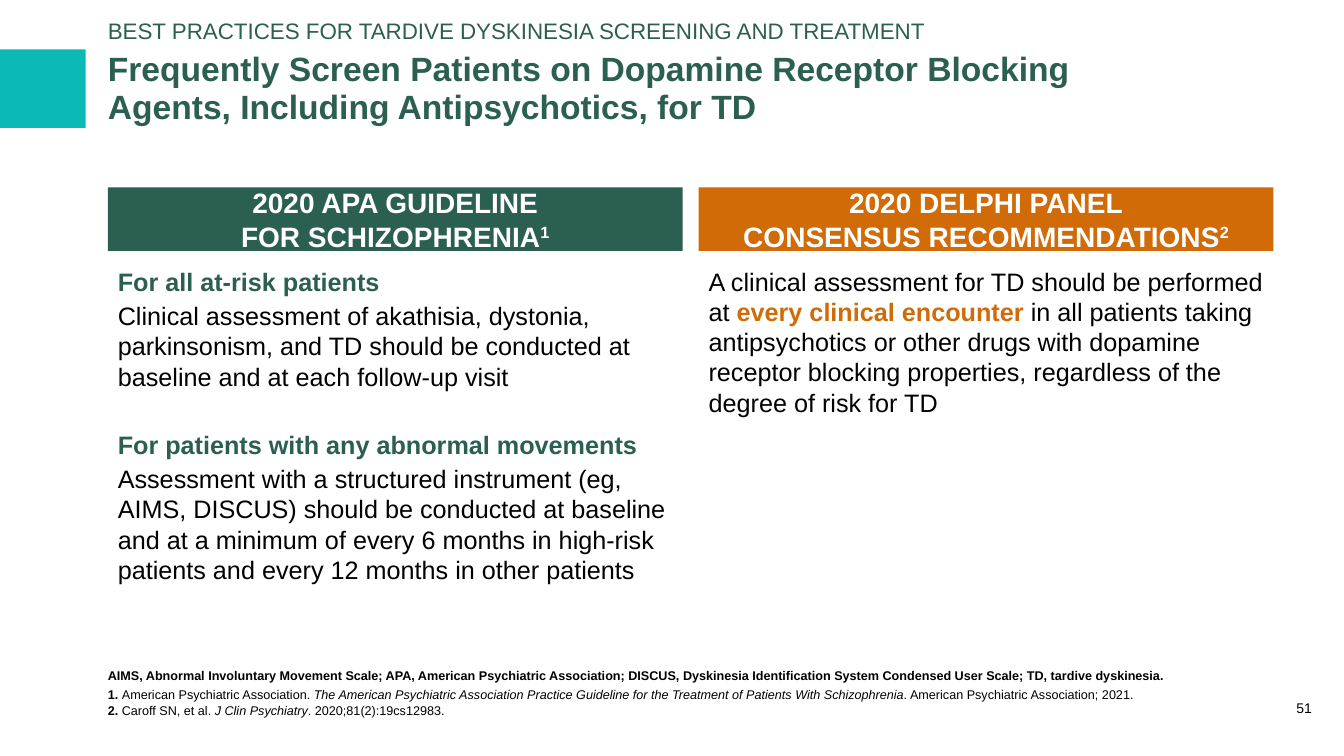
import pptx
import pptx.dml.color
import pptx.enum.shapes
import pptx.enum.text
import pptx.util

RGBColor = pptx.dml.color.RGBColor
ALIGN = pptx.enum.text.PP_ALIGN
ANCHOR = pptx.enum.text.MSO_ANCHOR

GREEN = RGBColor(0x2B, 0x5F, 0x51)
ORANGE = RGBColor(0xD0, 0x6B, 0x08)
TEAL = RGBColor(0x0B, 0xBA, 0xB4)
BLACK = RGBColor(0, 0, 0)
WHITE = RGBColor(0xFF, 0xFF, 0xFF)


class SlideBuilder:
    """Holds the style and the current slide; lengths are in px, 100 to the inch."""

    FONT = "Arial"
    SCALE = 9144

    def __init__(self, width, height):
        self.deck = pptx.Presentation()
        self.deck.slide_width = width * self.SCALE
        self.deck.slide_height = height * self.SCALE
        self.slide = self.deck.slides.add_slide(self.deck.slide_layouts[6])

    def emu(self, lengths):
        return [length * self.SCALE for length in lengths]

    def frame(self, shape, anchor, insets):
        text_frame = shape.text_frame
        text_frame.word_wrap = True
        text_frame.vertical_anchor = anchor
        across, down = self.emu(insets)
        text_frame.margin_left = text_frame.margin_right = across
        text_frame.margin_top = text_frame.margin_bottom = down
        return text_frame

    def block(self, box, fill):
        shape = self.slide.shapes.add_shape(
            pptx.enum.shapes.MSO_SHAPE.RECTANGLE, *self.emu(box))
        shape.shadow.inherit = False
        shape.fill.solid()
        shape.fill.fore_color.rgb = fill
        shape.line.fill.background()
        return shape

    def banner(self, box, fill, runs):
        text_frame = self.frame(self.block(box, fill), ANCHOR.MIDDLE, (10, 10))
        self.paragraph(text_frame, runs, 20, WHITE, bold=True, align=ALIGN.CENTER)

    def textbox(self, box, anchor=ANCHOR.MIDDLE, insets=(0, 0)):
        return self.frame(self.slide.shapes.add_textbox(*self.emu(box)), anchor, insets)

    def paragraph(self, text_frame, runs, size, color=BLACK, bold=False,
                  align=ALIGN.LEFT, spacing=1.0, before=0, after=0):
        paragraph = text_frame.paragraphs[0]
        if paragraph.runs:
            paragraph = text_frame.add_paragraph()
        paragraph.alignment = align
        paragraph.line_spacing = spacing
        paragraph.space_before = pptx.util.Pt(before)
        paragraph.space_after = pptx.util.Pt(after)
        paragraph.font.name = self.FONT
        paragraph.font.size = pptx.util.Pt(size)
        paragraph.font.bold = bold
        paragraph.font.color.rgb = color
        for text, style in runs:
            for index, line in enumerate(text.split("\n")):
                if index:
                    paragraph.add_line_break()
                if line:
                    self.run(paragraph, line, **style)

    def run(self, paragraph, text, bold=None, italic=None, color=None, superscript=False):
        run = paragraph.add_run()
        run.text = text
        run.font.bold = bold
        run.font.italic = italic
        if color is not None:
            run.font.color.rgb = color
        if superscript:
            run.font._element.set("baseline", "30000")

    def save(self):
        self.deck.save("out.pptx")


def main():
    builder = SlideBuilder(1333, 750)
    left, column_width, column_step = 107, 570, 586

    builder.block((0, 49, 85, 78), TEAL)
    title = builder.textbox((left, 39, 986, 99))
    builder.paragraph(title, [("Frequently Screen Patients on Dopamine Receptor Blocking "
                               "Agents, Including Antipsychotics, for TD", {})],
                      24, GREEN, bold=True, spacing=0.95)
    section = builder.textbox((left, 18, 1026, 28))
    builder.paragraph(section, [("BEST PRACTICES FOR TARDIVE DYSKINESIA SCREENING AND TREATMENT", {})],
                      16, GREEN, spacing=0.95)
    page_number = builder.textbox((1277, 668, 33, 43), ANCHOR.BOTTOM)
    builder.paragraph(page_number, [("51", {})], 10, align=ALIGN.CENTER, spacing=0.95)

    heading = {"color": GREEN, "bold": True}
    guidelines = [
        ("2020 APA GUIDELINE\nFOR SCHIZOPHRENIA", "1", GREEN, [
            ([("For all at-risk patients", {})], heading),
            ([("Clinical assessment of akathisia, dystonia, parkinsonism, and TD should be "
               "conducted at baseline and at each follow-up visit", {})], {}),
            ([("For patients with any abnormal movements", {})], {**heading, "before": 24}),
            ([("Assessment with a structured instrument (eg, AIMS, DISCUS) should be conducted "
               "at baseline and at a minimum of every 6 months in high-risk patients and every "
               "12 months in other patients", {})], {}),
        ]),
        ("2020 DELPHI PANEL\nCONSENSUS RECOMMENDATIONS", "2", ORANGE, [
            ([("A clinical assessment for TD should be performed at ", {}),
              ("every clinical encounter ", {"bold": True, "color": ORANGE}),
              ("in all patients taking antipsychotics or other drugs with dopamine receptor "
               "blocking properties, regardless of the degree of risk for TD", {})], {}),
        ]),
    ]
    for column, (name, reference, color, advice) in enumerate(guidelines):
        x = left + column * column_step
        builder.banner((x, 186, column_width, 63), color,
                       [(name, {}), (reference, {"superscript": True})])
        body = builder.textbox((x, 259, column_width, 390), ANCHOR.TOP, (10, 5))
        for runs, style in advice:
            builder.paragraph(body, runs, 18, after=3, **style)

    footnotes = builder.textbox((left, 656, 1156, 56), ANCHOR.BOTTOM)
    builder.paragraph(footnotes, [
        ("AIMS, Abnormal Involuntary Movement Scale; APA, American Psychiatric Association; "
         "DISCUS, Dyskinesia Identification System Condensed User Scale; "
         "TD, tardive dyskinesia.", {})], 9, bold=True, after=3)
    builder.paragraph(footnotes, [
        ("1. ", {"bold": True}),
        ("American Psychiatric Association. ", {}),
        ("The American Psychiatric Association Practice Guideline for the Treatment of "
         "Patients With Schizophrenia", {"italic": True}),
        (". American Psychiatric Association; 2021.\n", {}),
        ("2. ", {"bold": True}),
        ("Caroff SN, et al. ", {}),
        ("J Clin Psychiatry", {"italic": True}),
        (". 2020;81(2):19cs12983.", {})], 9)
    builder.save()


if __name__ == "__main__":
    main()
